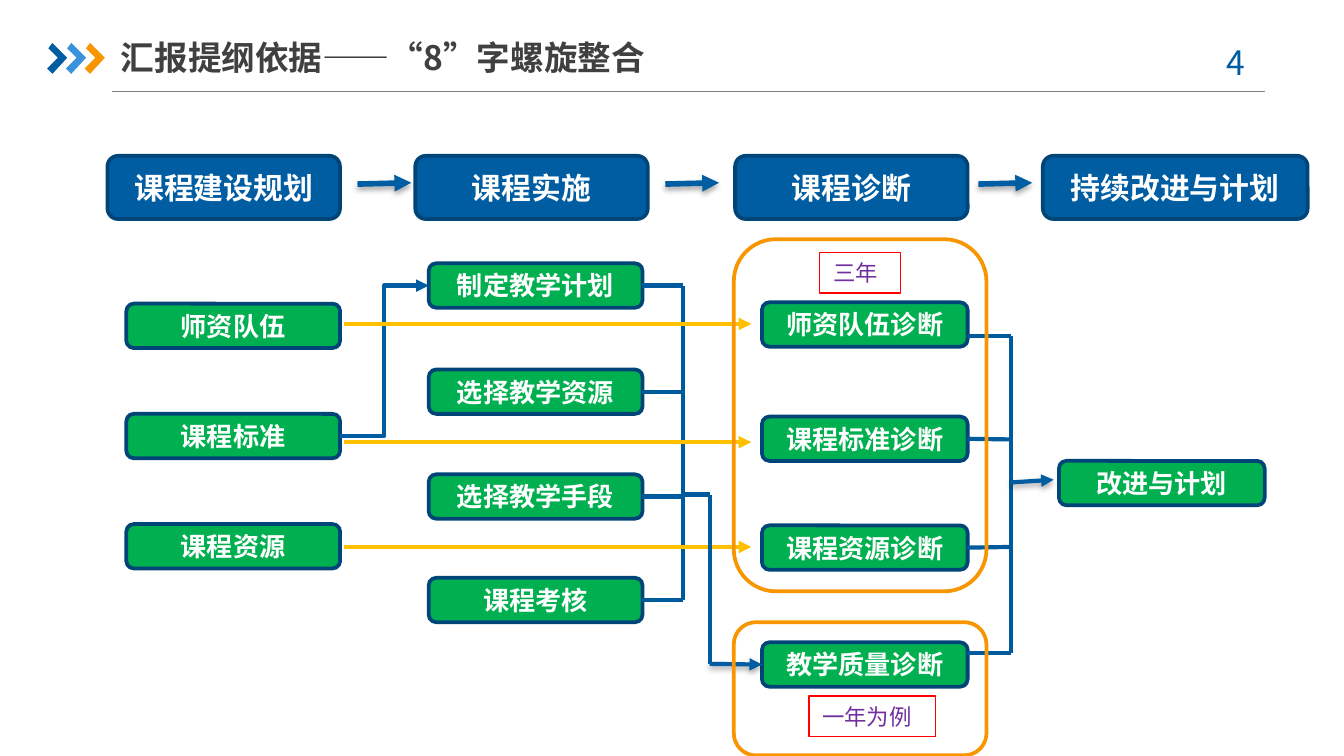
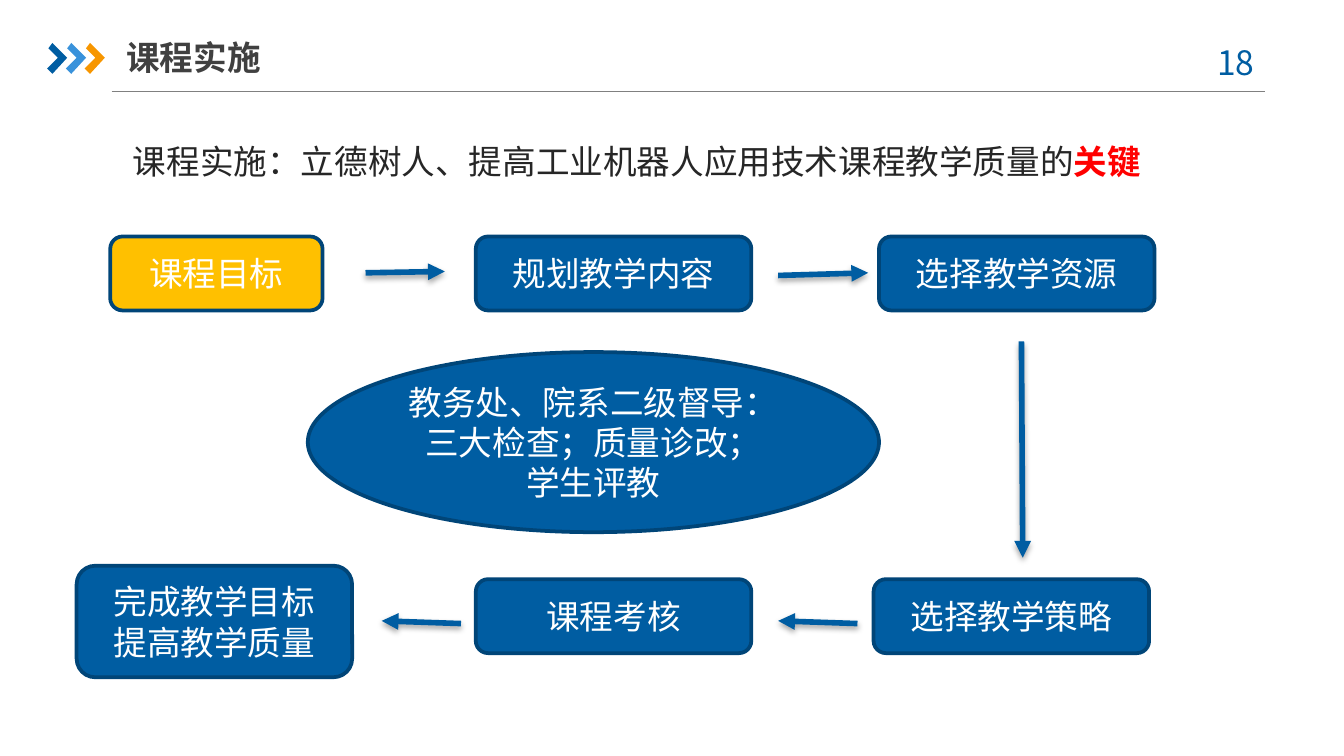
import pptx
import pptx.dml.color
import pptx.enum.shapes
import pptx.enum.text
import pptx.oxml
import pptx.oxml.ns
import pptx.util

Inches = pptx.util.Inches
Shape = pptx.enum.shapes.MSO_SHAPE
Kind = pptx.enum.shapes.MSO_CONNECTOR
Align = pptx.enum.text.PP_ALIGN
Anchor = pptx.enum.text.MSO_ANCHOR
qn = pptx.oxml.ns.qn

BLUE, EDGE, WIRE, SKY = "005DA2", "004578", "005B9E", "3992DB"
GREEN, GOLD, AMBER, RED = "00B050", "FFC000", "F79600", "FF0000"
WHITE, GRAY, DARK, INK, PURPLE = "FFFFFF", "808080", "404040", "262626", "7030A0"
NOTO = "Noto Sans CJK SC"
LEFT, RIGHT = 1, 3

STAGE = {"size": 16, "bold": True, "name": "Calibri"}
STEP = {"size": 14, "bold": True, "name": "Calibri"}
PLAIN = {"size": 18, "name": NOTO}
SHADE = (
    '<a:outerShdw blurRad="39370" dist="22860" dir="5400000" rotWithShape="0">'
    '<a:srgbClr val="000000"><a:alpha val="35000"/></a:srgbClr></a:outerShdw>'
)


def hue(code):
    """Turn a hex string into a colour."""
    return pptx.dml.color.RGBColor.from_string(code)


def place(item, x, y, w, h):
    """Set position and size in inches."""
    for key, val in {"left": x, "top": y, "width": w, "height": h}.items():
        setattr(item, key, Inches(val))


def style(run, color, look):
    """Apply font values, colour and East Asian face to a run."""
    for key, val in look.items():
        setattr(run.font, key, pptx.util.Pt(val) if key == "size" else val)
    run.font.color.rgb = hue(color)
    face = run.font._element.makeelement(qn("a:ea"), {"typeface": NOTO})
    run.font._element.find(qn("a:latin")).addnext(face)


def write(item, text, color, look, align=Align.CENTER, anchor=Anchor.MIDDLE, pad=None):
    """Fill a shape with styled paragraphs, one for each line."""
    frame = item.text_frame
    frame.word_wrap = True
    frame.auto_size = pptx.enum.text.MSO_AUTO_SIZE.NONE
    frame.vertical_anchor = anchor
    if pad:
        for side, val in zip(("left", "right", "top", "bottom"), pad):
            setattr(frame, "margin_" + side, Inches(val))
    for spot, line in enumerate(text.split("\n")):
        para = frame.add_paragraph() if spot else frame.paragraphs[0]
        para.alignment = align
        run = para.add_run()
        run.text = line
        style(run, color, look)
    return frame


def box(slide, x, y, w, h, fill=None, edge=EDGE, width=2, form=Shape.ROUNDED_RECTANGLE):
    """Draw a preset shape with an outline and an optional fill."""
    item = slide.shapes.add_shape(form, *map(Inches, (x, y, w, h)))
    item.shadow.inherit = False
    if fill:
        item.fill.solid()
        item.fill.fore_color.rgb = hue(fill)
    else:
        item.fill.background()
    item.line.color.rgb = hue(edge)
    item.line.width = pptx.util.Pt(width)
    return item


def card(slide, text, x, y, w, h, fill, look):
    """Draw a rounded box with white centred text."""
    item = box(slide, x, y, w, h, fill)
    write(item, text, WHITE, look)
    return item


def wire(slide, x1, y1, x2, y2, color=WIRE, width=2.25, head=False, shade=False,
         start=None, end=None, kind=Kind.STRAIGHT):
    """Draw a connector, joined to the right of start or the left of end."""
    item = slide.shapes.add_connector(kind, *map(Inches, (x1, y1, x2, y2)))
    if start:
        item.begin_connect(start, RIGHT)
    if end:
        item.end_connect(end, LEFT)
    item.line.color.rgb = hue(color)
    item.line.width = pptx.util.Pt(width)
    props = item._element.spPr
    if head:
        line = props.find(qn("a:ln"))
        line.append(line.makeelement(qn("a:tailEnd"), {"type": "triangle"}))
    space = pptx.oxml.ns.nsdecls("a")
    props.append(pptx.oxml.parse_xml(
        f"<a:effectLst {space}>{SHADE if shade else ''}</a:effectLst>"))


def arrow(slide, x1, y1, x2, y2, width=3, end=None):
    """Draw a blue arrow with a soft shadow."""
    wire(slide, x1, y1, x2, y2, BLUE, width, True, True, end=end)


def mark(slide, x, y):
    """Draw the three chevrons."""
    group = slide.shapes.add_group_shape()
    for spot, color in enumerate((BLUE, SKY, AMBER)):
        pen = group.shapes.build_freeform(1, 4, scale=Inches(0.01))
        pen.add_line_segments([(4, 0), (15, 11), (4, 23), (0, 19), (8, 11)])
        item = pen.convert_to_shape(Inches(x + 0.14 * spot), Inches(y))
        item.shadow.inherit = False
        item.fill.solid()
        item.fill.fore_color.rgb = hue(color)
        item.line.fill.background()


def head(deck, title, page, x, w):
    """Add a slide with its title, rule, chevrons and page number."""
    slide = deck.slides.add_slide(deck.slide_layouts[5])
    wire(slide, 0.83, 0.68, 9.41, 0.68, GRAY, 0.75)
    mark(slide, 0.35, 0.32)
    number = slide.shapes.add_textbox(*map(Inches, (8.86, 0.26, 0.73, 0.4)))
    write(number, page + " ", BLUE, PLAIN, anchor=Anchor.TOP)
    place(slide.shapes.title, x, 0.22, w, 0.41)
    write(slide.shapes.title, title, DARK, {**PLAIN, "bold": True}, Align.LEFT,
          pad=(0, 0, 0.05, 0.05))
    return slide


def stack(slide, x, y, w, steps):
    """Draw a column of green steps given as name and offset."""
    return [card(slide, text, x, y + down, w, 0.33, GREEN, STEP) for text, down in steps]


def stages(slide, x, y):
    """Draw the top row of stages with arrows between."""
    row = (("课程建设规划", 0, 1.73), ("课程实施", 2.29, 1.73),
           ("课程诊断", 4.67, 1.73), ("持续改进与计划", 6.96, 1.97))
    for text, left, w in row:
        card(slide, text, x + left, y, w, 0.47, BLUE, STAGE)
    for left in (1.86, 4.15, 6.48):
        arrow(slide, x + left, y + 0.21, x + left + 0.4, y + 0.2)


def comb(slide, x, y, ends, bar):
    """Draw stubs to a vertical bar, each joined to its step if given."""
    for down, step in ends:
        wire(slide, x, y + down, x + bar, y + down, start=step)
    wire(slide, x + bar, y + ends[-1][0], x + bar, y + ends[0][0])


def teach(slide, x, y, source):
    """Draw the teaching steps, fed by the source step."""
    downs = (0, 0.79, 1.57, 2.34)
    names = ("制定教学计划", "选择教学资源", "选择教学手段", "课程考核")
    steps = stack(slide, x, y, 1.59, zip(names, downs))
    wire(slide, x - 0.66, y + 1.28, x, y + 0.16, BLUE, head=True,
         start=source, end=steps[0], kind=Kind.ELBOW)
    comb(slide, x + 1.59, y, [(d + 0.33 / 2, s) for d, s in zip(downs, steps)], 0.3)


def checks(slide, x, y):
    """Draw the diagnosis steps, their comb and the outcome."""
    names = ("师资队伍诊断", "课程标准诊断", "课程资源诊断", "教学质量诊断")
    steps = stack(slide, x, y, 1.53, zip(names, (0, 0.85, 1.66, 2.53)))
    comb(slide, x + 1.53, y, [(0.25, None), (1.02, steps[1]),
                              (1.82, steps[2]), (2.61, None)], 0.32)
    arrow(slide, x + 1.85, y + 1.34, x + 2.17, y + 1.32, 2.25)
    stack(slide, x + 2.21, y + 1.18, 1.53, [("改进与计划", 0)])
    wire(slide, x - 0.59, y + 1.43, x - 0.39, y + 1.43)
    wire(slide, x - 0.39, y + 2.69, x - 0.39, y + 1.43)
    arrow(slide, x - 0.39, y + 2.69, x, y + 2.68, 2.25, steps[3])


def cycle(slide, x, y, h, text, left, down, w):
    """Draw an amber frame with its boxed period label."""
    box(slide, x, y, 1.88, h, edge=AMBER)
    label = box(slide, x + left, y + down, w, 0.3, edge=RED, width=0.75,
                form=Shape.RECTANGLE)
    write(label, text, PURPLE, {**PLAIN, "size": 12}, Align.LEFT, Anchor.TOP)


def spiral(deck):
    """Build the slide on spiral integration."""
    slide = head(deck, "汇报提纲依据——“8”字螺旋整合", "4", 0.9, 5.19)
    stages(slide, 0.8, 1.16)
    plans = stack(slide, 0.94, 2.26, 1.59,
                  [("师资队伍", 0), ("课程标准", 0.82), ("课程资源", 1.64)])
    teach(slide, 3.19, 1.96, plans[1])
    for y in (2.41, 3.29, 4.07):
        wire(slide, 2.56, y, 5.59, y, GOLD, head=True)
    checks(slide, 5.67, 2.25)
    cycle(slide, 5.46, 1.78, 2.62, "三年", 0.64, 0.1, 0.6)
    cycle(slide, 5.46, 4.63, 0.99, "一年为例", 0.56, 0.55, 0.94)


def intro(slide, x, y, w, h):
    """Write the lead sentence with its red key word."""
    item = slide.shapes.add_textbox(*map(Inches, (x, y, w, h)))
    frame = write(item, "课程实施：立德树人、提高工业机器人应用技术课程教学质量的", INK,
                  PLAIN, Align.JUSTIFY, Anchor.TOP, (0.08, 0.08, 0.04, 0.04))
    para = frame.paragraphs[0]
    para.line_spacing = 1.5
    run = para.add_run()
    run.text = "关键"
    style(run, RED, {**PLAIN, "bold": True})


def loop(slide, x, y):
    """Draw the teaching loop around the supervision ellipse."""
    cards = (
        ("课程目标", 0.25, 0, 1.58, 0.55, GOLD),
        ("规划教学内容", 2.97, 0, 2.05, 0.55, BLUE),
        ("选择教学资源", 5.97, 0, 2.05, 0.55, BLUE),
        ("选择教学策略", 5.93, 2.55, 2.05, 0.55, BLUE),
        ("课程考核", 2.97, 2.55, 2.05, 0.55, BLUE),
        ("完成教学目标\n提高教学质量", 0, 2.45, 2.05, 0.83, BLUE),
    )
    for text, left, down, w, h, fill in cards:
        card(slide, text, x + left, y + down, w, h, fill, PLAIN)
    paths = ((2.15, 0.27, 2.74, 0.26), (5.22, 0.29, 5.89, 0.27),
             (7.03, 0.78, 7.04, 2.39), (5.81, 2.88, 5.22, 2.86),
             (2.86, 2.88, 2.27, 2.86))
    for x1, y1, x2, y2 in paths:
        arrow(slide, x + x1, y + y1, x + x2, y + y2)
    hub = box(slide, x + 1.72, y + 0.86, 4.25, 1.34, BLUE, form=Shape.OVAL)
    write(hub, "教务处、院系二级督导：三大检查；质量诊改；\n学生评教", WHITE, PLAIN)


def course(deck):
    """Build the slide on carrying out the course."""
    slide = head(deck, "课程实施", "18", 0.94, 4.38)
    intro(slide, 0.91, 0.86, 8.23, 0.53)
    loop(slide, 0.57, 1.76)


def main():
    """Build and save the deck."""
    deck = pptx.Presentation()
    deck.slide_width, deck.slide_height = Inches(10), Inches(10 * 9 / 16)
    spiral(deck)
    course(deck)
    deck.save("out.pptx")


if __name__ == "__main__":
    main()
